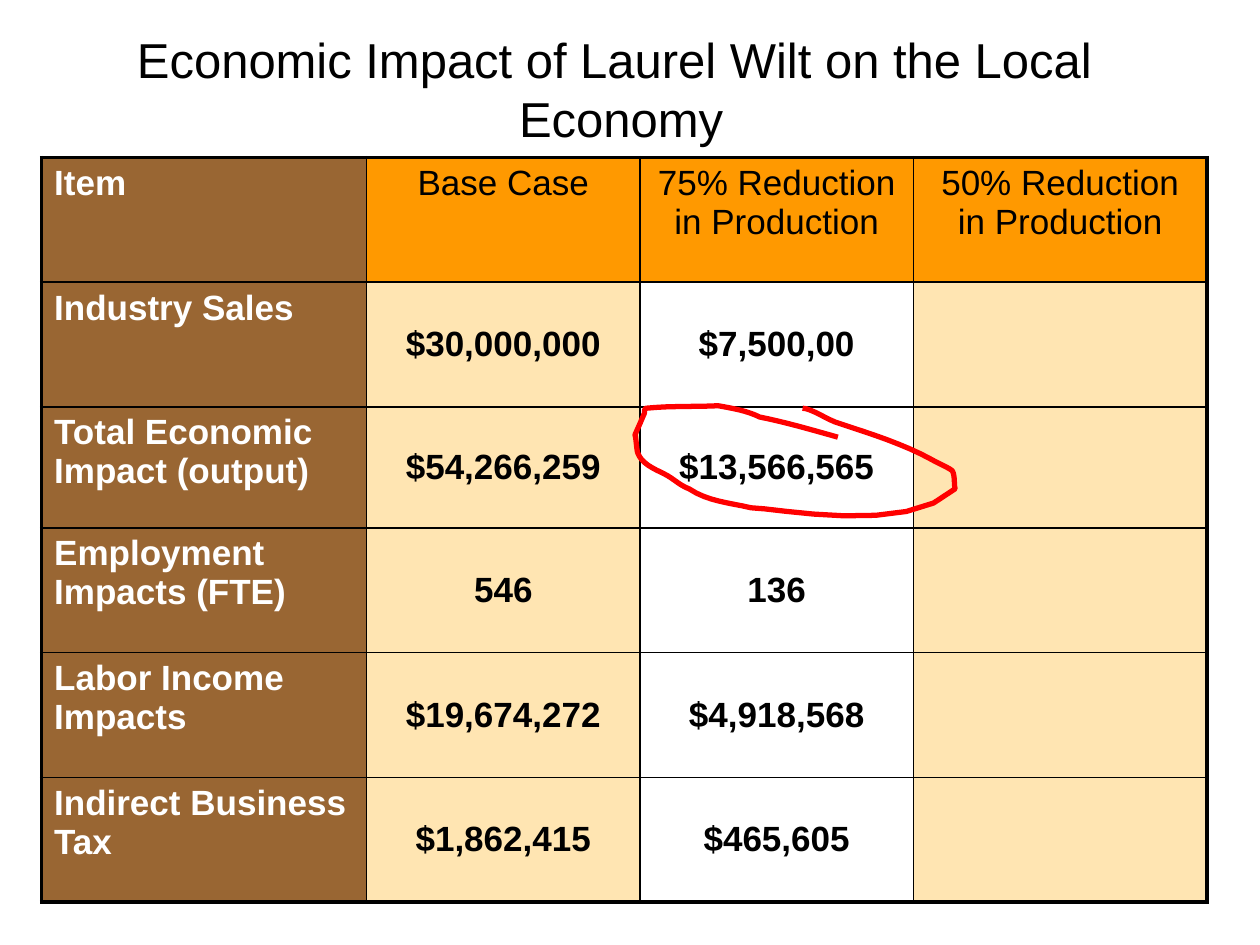
"""Build the slide on the economic impact of laurel wilt."""
from lxml.etree import SubElement
from pptx import Presentation
from pptx.dml.color import RGBColor
from pptx.enum.text import MSO_ANCHOR as Anchor, MSO_AUTO_SIZE as AutoSize, PP_ALIGN as Align
from pptx.oxml import parse_xml
from pptx.oxml.ns import nsdecls, qn
from pptx.util import Inches, Pt

TITLE = "Economic Impact of Laurel Wilt on the Local\v Economy"
IMPACTS = [
    ("Item", "Base Case", "75% Reduction in Production", "50% Reduction in Production"),
    ("Industry Sales", "$30,000,000", "$7,500,00", ""),
    ("Total Economic Impact (output)", "$54,266,259", "$13,566,565", ""),
    ("Employment Impacts (FTE)", "546", "136", ""),
    ("Labor Income Impacts", "$19,674,272", "$4,918,568", ""),
    ("Indirect Business Tax", "$1,862,415", "$465,605", ""),
]
COLUMN_WIDTHS = (2.58, 2.17, 2.17, 2.33)
ROW_HEIGHTS = (0.99, 0.99, 0.96, 0.99, 0.99, 0.99)
CIRCLE_START = (6.65, 3.47)
CIRCLE_CURVES = [
    ((6.44, 3.41), (6.23, 3.35), (6.03, 3.31)),
    ((5.93, 3.26), (5.81, 3.24), (5.7, 3.22)),
    ((5.51, 3.23), (5.32, 3.22), (5.13, 3.24)),
    ((5.11, 3.24), (5.12, 3.28), (5.11, 3.29)),
    ((5.09, 3.34), (5.04, 3.45), (5.04, 3.45)),
    ((5.05, 3.49), (5.05, 3.54), (5.06, 3.59)),
    ((5.09, 3.68), (5.19, 3.72), (5.27, 3.76)),
    ((5.35, 3.8), (5.39, 3.85), (5.47, 3.88)),
    ((5.62, 3.98), (5.79, 3.99), (5.96, 4.03)),
    ((6.15, 4.03), (7.2, 4.25), (7.58, 3.88)),
    ((7.57, 3.83), (7.58, 3.78), (7.56, 3.74)),
    ((7.55, 3.72), (7.43, 3.67), (7.4, 3.65)),
    ((7.16, 3.52), (6.93, 3.45), (6.66, 3.36)),
    ((6.58, 3.34), (6.44, 3.24), (6.37, 3.24)),
]
THEME = {
    "font": "Arial", "title": 28, "cell": 20,
    "ink": "000000", "white": "FFFFFF", "item": "996633", "header": "FF9900",
    "value": "FFCC66", "circle": "FF0000",
    "outer": 2.25, "inner": 1, "stroke": 3, "alpha": 50,
}


def style_text(frame, size, color, bold, align):
    for paragraph in frame.paragraphs:
        paragraph.alignment = align
        for run in paragraph.runs:
            run.font.name, run.font.size, run.font.bold = THEME["font"], Pt(size), bold
            run.font.color.rgb = RGBColor.from_string(color)


def set_borders(cell, widths):
    properties = cell._tc.get_or_add_tcPr()
    for position, (side, width) in enumerate(zip("LRTB", widths)):
        properties.insert(position, parse_xml(
            f'<a:ln{side} {nsdecls("a")} w="{Pt(width)}"><a:solidFill>'
            f'<a:srgbClr val="{THEME["ink"]}"/></a:solidFill></a:ln{side}>'))


def style_cell(cell, row, column):
    is_item, is_header = column == 0, row == 0
    fill = "item" if is_item else "header" if is_header else "white" if column == 2 else "value"
    cell.fill.solid()
    cell.fill.fore_color.rgb = RGBColor.from_string(THEME[fill])
    if not (is_item or is_header):
        cell.vertical_anchor = Anchor.MIDDLE
        color = cell._tc.tcPr.find(".//" + qn("a:srgbClr"))
        SubElement(color, qn("a:alpha"), val=str(THEME["alpha"] * 1000))
    style_text(cell.text_frame, THEME["cell"], THEME["white" if is_item else "ink"],
               is_item or not is_header, Align.LEFT if is_item else Align.CENTER)
    edges = (is_item, column == len(COLUMN_WIDTHS) - 1, is_header, row == len(ROW_HEIGHTS) - 1)
    set_borders(cell, [THEME["outer" if edge else "inner"] for edge in edges])


def add_title(slide):
    title = slide.shapes.title
    title.left, title.top, title.width, title.height = map(Inches, (0, 0.08, 9.75, 1.25))
    frame = title.text_frame
    frame.text = TITLE
    frame.word_wrap, frame.auto_size = True, AutoSize.NONE
    frame.vertical_anchor = Anchor.MIDDLE
    style_text(frame, THEME["title"], THEME["ink"], False, Align.CENTER)


def add_impacts(slide):
    table = slide.shapes.add_table(
        len(ROW_HEIGHTS), len(COLUMN_WIDTHS), Inches(0.33), Inches(1.25),
        Inches(sum(COLUMN_WIDTHS)), Inches(sum(ROW_HEIGHTS))).table
    table.first_row = table.horz_banding = False
    for column, width in zip(table.columns, COLUMN_WIDTHS):
        column.width = Inches(width)
    for row, height in zip(table.rows, ROW_HEIGHTS):
        row.height = Inches(height)
    for row, texts in enumerate(IMPACTS):
        for column, text in enumerate(texts):
            cell = table.cell(row, column)
            cell.text_frame.text = text
            style_cell(cell, row, column)


def curve_points(start, curves, steps=8):
    points = []
    for first, second, end in curves:
        for step in range(1, steps + 1):
            t = step / steps
            weights = ((1 - t) ** 3, 3 * t * (1 - t) ** 2, 3 * t ** 2 * (1 - t), t ** 3)
            points.append(tuple(
                Inches(sum(w * value for w, value in zip(weights, values)))
                for values in zip(start, first, second, end)))
        start = end
    return points


def add_circle(slide):
    builder = slide.shapes.build_freeform(*map(Inches, CIRCLE_START))
    builder.add_line_segments(curve_points(CIRCLE_START, CIRCLE_CURVES), close=False)
    circle = builder.convert_to_shape()
    circle.shadow.inherit = False
    circle.fill.background()
    circle.line.color.rgb = RGBColor.from_string(THEME["circle"])
    circle.line.width = Pt(THEME["stroke"])


def main():
    deck = Presentation()
    deck.slide_width, deck.slide_height = Inches(10), Inches(7.5)
    slide = deck.slides.add_slide(deck.slide_layouts[5])
    add_title(slide)
    add_impacts(slide)
    add_circle(slide)
    deck.save("out.pptx")


if __name__ == "__main__":
    main()
